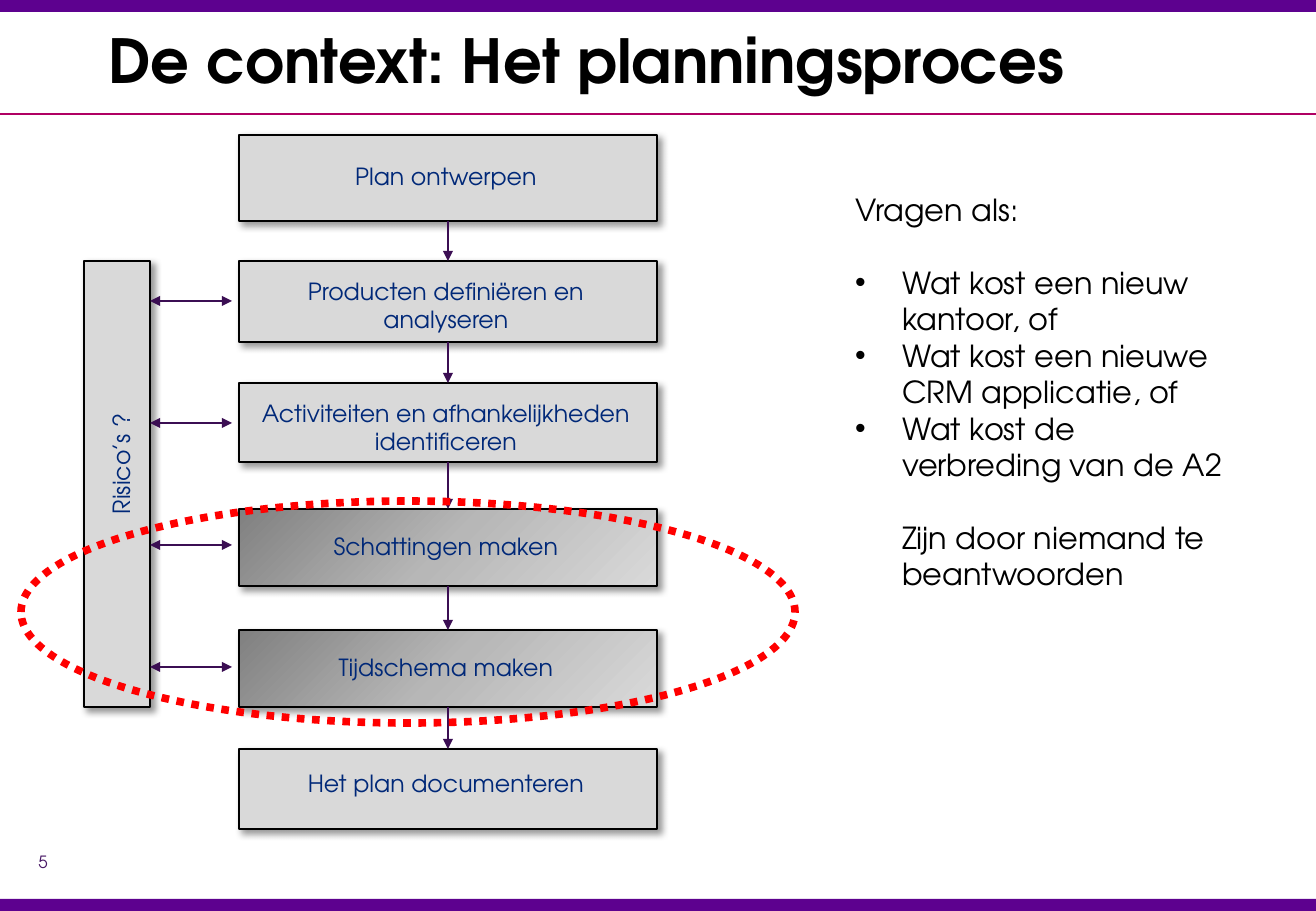
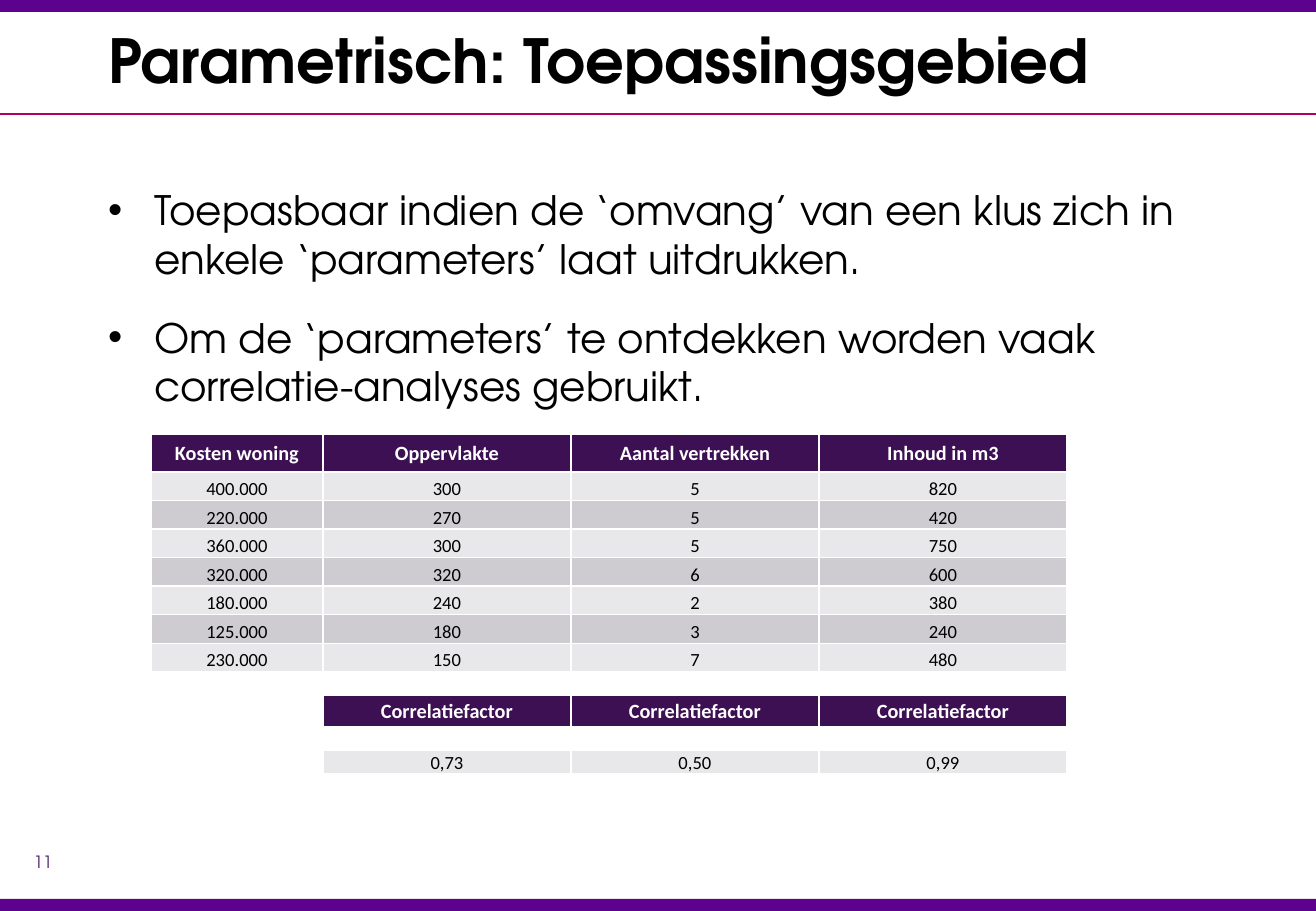
import pptx
import pptx.util
import pptx.dml.color
import pptx.enum.dml
import pptx.enum.shapes
import pptx.enum.text
import pptx.oxml
import pptx.oxml.ns
import lxml.etree

RGB = pptx.dml.color.RGBColor
Pt = pptx.util.Pt
SHAPE = pptx.enum.shapes.MSO_SHAPE
ALIGN = pptx.enum.text.PP_ALIGN
ANCHOR = pptx.enum.text.MSO_ANCHOR
qn = pptx.oxml.ns.qn

SCALE = 914400 / 121.5
WIDE, HIGH = 1316, 911
FONT, CELL_FONT = "TeX Gyre Adventor", "Calibri"
INSET = (12, 6, 12, 6)

BLACK = RGB(0x00, 0x00, 0x00)
WHITE = RGB(0xFF, 0xFF, 0xFF)
BAND = RGB(0x5D, 0x01, 0x8F)
RULE = RGB(0xB0, 0x00, 0x63)
PAGE = RGB(0x49, 0x19, 0x66)
GREY = RGB(0xD9, 0xD9, 0xD9)
NAVY = RGB(0x00, 0x28, 0x78)
ARROW = RGB(0x3B, 0x0E, 0x53)
RED = RGB(0xFF, 0x00, 0x00)
HEAD = RGB(0x3C, 0x10, 0x53)
LIGHT = RGB(0xE8, 0xE7, 0xE9)
DARK = RGB(0xCE, 0xCC, 0xD1)

# label, top, height, space above the text, shaded
STEPS = [
    ("Plan ontwerpen", 135, 86, 27, False),
    ("Producten definiëren en analyseren", 261, 81, 16, False),
    ("Activiteiten en afhankelijkheden identificeren", 383, 79, 16, False),
    ("Schattingen maken", 509, 77, 23, True),
    ("Tijdschema maken", 630, 77, 23, True),
    ("Het plan documenteren", 749, 80, 20, False),
]

HOMES = [
    ("Kosten woning", "Oppervlakte", "Aantal vertrekken", "Inhoud in m3"),
    ("400.000", "300", "5", "820"),
    ("220.000", "270", "5", "420"),
    ("360.000", "300", "5", "750"),
    ("320.000", "320", "6", "600"),
    ("180.000", "240", "2", "380"),
    ("125.000", "180", "3", "240"),
    ("230.000", "150", "7", "480"),
    ("", "", "", ""),
    ("", "Correlatiefactor", "Correlatiefactor", "Correlatiefactor"),
    ("", "", "", ""),
    ("", "0,73", "0,50", "0,99"),
]


def px(size):
    return pptx.util.Emu(round(size * SCALE))


def put(para, text, size, color, bold=False, font=FONT):
    run = para.add_run()
    run.text = text
    run.font.size = Pt(size)
    run.font.name = font
    run.font.bold = bold
    run.font.color.rgb = color


def pad(frame, inset):
    (frame.margin_left, frame.margin_top,
     frame.margin_right, frame.margin_bottom) = map(px, inset)
    frame.word_wrap = True


def textbox(slide, area, inset=INSET, anchor=ANCHOR.TOP):
    box = slide.shapes.add_textbox(*map(px, area))
    pad(box.text_frame, inset)
    box.text_frame.vertical_anchor = anchor
    return box


def label(slide, area, text, size, color, align=ALIGN.LEFT, bold=False, **look):
    box = textbox(slide, area, **look)
    para = box.text_frame.paragraphs[0]
    para.alignment = align
    put(para, text, size, color, bold)
    return box


def indent(para, left, bullet):
    props = para._p.get_or_add_pPr()
    props.set("marL", str(px(left)))
    props.set("indent", str(px(-left if bullet else 0)))
    if bullet:
        lxml.etree.SubElement(props, qn("a:buFont")).set("typeface", "Arial")
        lxml.etree.SubElement(props, qn("a:buChar")).set("char", "•")


def listing(slide, area, items, size):
    # each item: text, left indent, bullet, space before in points
    frame = textbox(slide, area).text_frame
    for i, (text, left, bullet, gap) in enumerate(items):
        para = frame.add_paragraph() if i else frame.paragraphs[0]
        indent(para, left, bullet)
        if gap:
            para.space_before = Pt(gap)
        put(para, text, size, BLACK)


def shape(slide, kind, area, fill=None, line=None, width=1.13):
    item = slide.shapes.add_shape(kind, *map(px, area))
    item.shadow.inherit = False
    if fill is None:
        item.fill.background()
    else:
        item.fill.solid()
        item.fill.fore_color.rgb = fill
    if line is None:
        item.line.fill.background()
    else:
        item.line.color.rgb = line
        item.line.width = Pt(width)
    return item


def block(slide, area):
    # grey box with a soft shadow to the lower right
    box = shape(slide, SHAPE.RECTANGLE, area, GREY, BLACK)
    box._element.spPr.find(qn("a:effectLst")).append(pptx.oxml.parse_xml(
        f'<a:outerShdw {pptx.oxml.ns.nsdecls("a")} blurRad="{Pt(4)}" '
        f'dist="{Pt(3)}" dir="2700000" algn="tl" rotWithShape="0">'
        '<a:srgbClr val="000000"><a:alpha val="40000"/></a:srgbClr>'
        '</a:outerShdw>'))
    return box


def shade(box):
    old = box._element.spPr.find(qn("a:solidFill"))
    stops = "".join(
        f'<a:gs pos="{pos}"><a:srgbClr val="{tint}"/></a:gs>'
        for pos, tint in ((0, "808080"), (50000, "B7B7B7"), (100000, GREY)))
    old.getparent().replace(old, pptx.oxml.parse_xml(
        f'<a:gradFill {pptx.oxml.ns.nsdecls("a")} rotWithShape="1">'
        f'<a:gsLst>{stops}</a:gsLst><a:lin ang="2700000" scaled="0"/>'
        '</a:gradFill>'))


def link(slide, start, end, color, heads=()):
    line = slide.shapes.add_connector(
        pptx.enum.shapes.MSO_CONNECTOR.STRAIGHT, *map(px, start + end))
    line.line.color.rgb = color
    line.line.width = Pt(0.75)
    for name in heads:
        tip = lxml.etree.SubElement(line.line._get_or_add_ln(), qn(name))
        tip.set("type", "triangle")
    lxml.etree.SubElement(line._element.spPr, qn("a:effectLst"))
    return line


def new_slide(deck, title, page):
    # bands, rule, page number and title shared by all slides
    slide = deck.slides.add_slide(deck.slide_layouts[6])
    for top in (0, HIGH - 12):
        shape(slide, SHAPE.RECTANGLE, (0, top, WIDE, 12), BAND)
    label(slide, (12, 846, 62, 33), page, 10, PAGE, ALIGN.CENTER)
    link(slide, (0, 114), (WIDE, 114), RULE)
    label(slide, (96, 8, 1220, 102), title, 36, BLACK, bold=True,
          anchor=ANCHOR.MIDDLE)
    return slide


def step(slide, text, top, high, above, shaded):
    box = block(slide, (239, top, 418, high))
    if shaded:
        shade(box)
    frame = box.text_frame
    pad(frame, (14, above, 18, 0))
    frame.vertical_anchor = ANCHOR.TOP
    para = frame.paragraphs[0]
    para.alignment = ALIGN.CENTER
    put(para, text, 14, NAVY)
    return box


def process(slide):
    # risk bar beside the chain of steps
    block(slide, (84, 261, 66, 446))
    risk = label(slide, (-6, 526, 254, 29), "Risico’s ?", 14, NAVY,
                 ALIGN.RIGHT, inset=(0, 0, 0, 0))
    risk.rotation = 270
    boxes = [step(slide, *row) for row in STEPS]
    for y in range(301, 668, 122):
        link(slide, (150, y), (232, y), ARROW, ("a:headEnd", "a:tailEnd"))
    for upper, lower in zip(boxes, boxes[1:]):
        down = link(slide, (0, 0), (0, 0), ARROW, ("a:tailEnd",))
        down.begin_connect(upper, 2)
        down.end_connect(lower, 0)
    # dotted ring round the last planning steps
    ring = shape(slide, SHAPE.OVAL, (21, 501, 774, 222), None, RED, 4.5)
    ring.line.dash_style = pptx.enum.dml.MSO_LINE.ROUND_DOT


def fill_cell(cell, text, fill, head):
    props = cell._tc.get_or_add_tcPr()
    for side in ("lnL", "lnR", "lnT", "lnB"):
        props.append(pptx.oxml.parse_xml(
            f'<a:{side} {pptx.oxml.ns.nsdecls("a")} w="{Pt(1)}"><a:solidFill>'
            f'<a:srgbClr val="{WHITE}"/></a:solidFill></a:{side}>'))
    cell.fill.solid()
    cell.fill.fore_color.rgb = fill
    (cell.margin_left, cell.margin_top,
     cell.margin_right, cell.margin_bottom) = map(px, (1, 1, 1, 0))
    cell.vertical_anchor = ANCHOR.MIDDLE if head else ANCHOR.BOTTOM
    para = cell.text_frame.paragraphs[0]
    para.alignment = ALIGN.CENTER
    if text:
        put(para, text, 12 if head else 11, WHITE if head else BLACK,
            head, CELL_FONT)
    else:
        # keeps an empty row low
        lxml.etree.SubElement(para._p, qn("a:endParaRPr")).set("sz", "1000")


def homes(slide):
    cols = [172] + [248] * 3
    rows = [38] + [200 / 7] * 7 + [23, 32, 24, 22]
    area = (151, 434, sum(cols), sum(rows))
    table = slide.shapes.add_table(
        len(rows), len(cols), *map(px, area)).table
    table.horz_banding = False
    for col, wide in zip(table.columns, cols):
        col.width = px(wide)
    for r, texts in enumerate(HOMES):
        table.rows[r].height = px(rows[r])
        head = r in (0, 9)
        tint = HEAD if head else LIGHT if r % 2 else DARK
        for c, text in enumerate(texts):
            fill_cell(table.cell(r, c), text, tint if text else WHITE, head)


def main():
    deck = pptx.Presentation()
    deck.slide_width, deck.slide_height = px(WIDE), px(HIGH)

    # planning process
    slide = new_slide(deck, "De context: Het planningsproces", "5")
    process(slide)
    listing(slide, (843, 185, 394, 454), [
        ("Vragen als:", 0, False, 0),
        ("Wat kost een nieuw kantoor, of", 47, True, 21.6),
        ("Wat kost een nieuwe CRM applicatie, of", 47, True, 0),
        ("Wat kost de verbreding van de A2", 47, True, 0),
        ("Zijn door niemand te beantwoorden", 47, False, 21.6),
    ], 18)

    # parametric estimating
    slide = new_slide(deck, "Parametrisch: Toepassingsgebied", "11")
    listing(slide, (96, 179, 1130, 240), [
        ("Toepasbaar indien de ‘omvang’ van een klus zich in "
         "enkele ‘parameters’ laat uitdrukken.", 46, True, 0),
        ("Om de ‘parameters’ te ontdekken worden vaak "
         "correlatie-analyses gebruikt.", 46, True, 18),
    ], 24)
    homes(slide)
    deck.save("out.pptx")


if __name__ == "__main__":
    main()
